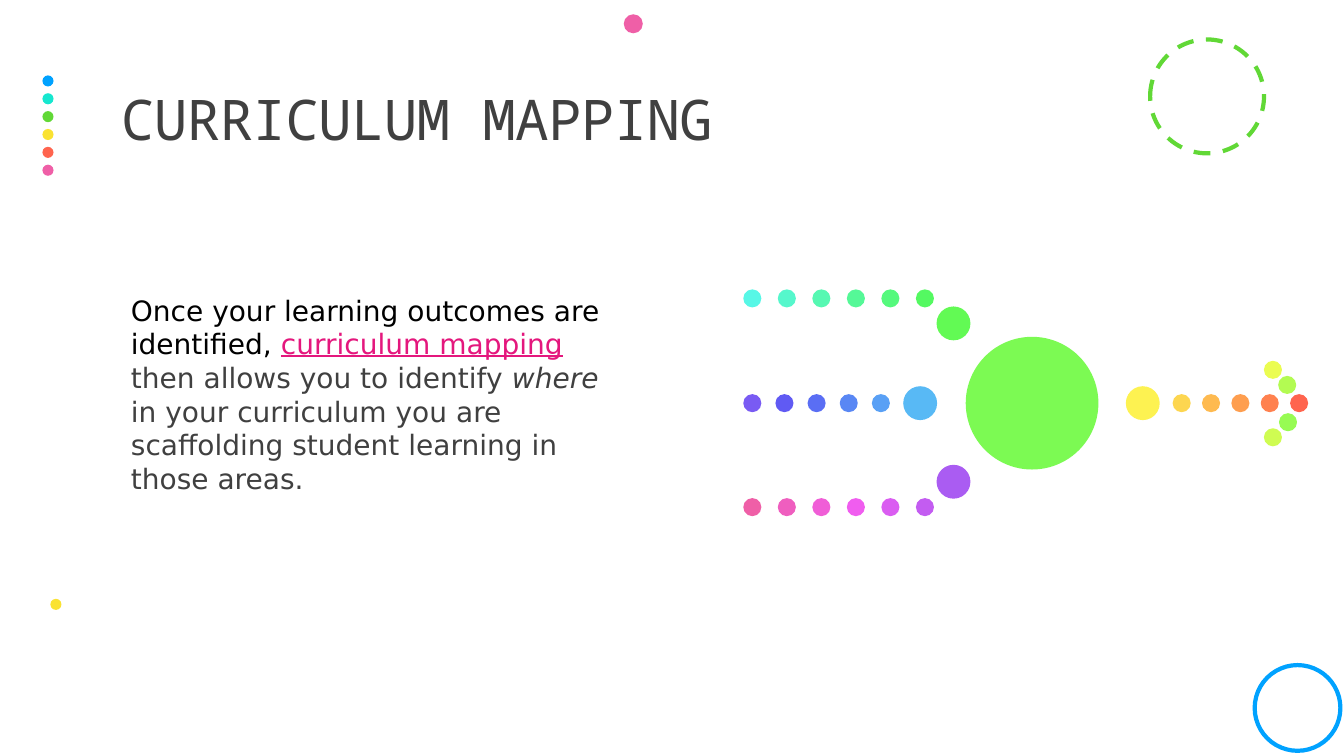
"""Build the curriculum mapping slide with its dotted process diagram."""
import pptx
import pptx.util
import pptx.dml.color
import pptx.enum.dml
import pptx.enum.shapes
import pptx.enum.text

Cm = pptx.util.Cm
Pt = pptx.util.Pt
RGBColor = pptx.dml.color.RGBColor

BLUE = RGBColor(0x00, 0xA2, 0xFF)
TEAL = RGBColor(0x16, 0xE7, 0xCF)
GREEN = RGBColor(0x61, 0xD8, 0x36)
YELLOW = RGBColor(0xFA, 0xE2, 0x32)
CORAL = RGBColor(0xFF, 0x64, 0x4E)
PINK = RGBColor(0xEF, 0x5F, 0xA7)
BLACK = RGBColor(0x00, 0x00, 0x00)
GREY = RGBColor(0x40, 0x40, 0x40)
MAGENTA = RGBColor(0xE4, 0x17, 0x7D)
HUB_GREEN = RGBColor(0x7C, 0xFA, 0x53)
INPUT_GREEN = RGBColor(0x62, 0xFA, 0x54)
INPUT_BLUE = RGBColor(0x58, 0xB9, 0xF5)
INPUT_PURPLE = RGBColor(0xAA, 0x5C, 0xF2)
OUTPUT_YELLOW = RGBColor(0xFD, 0xF2, 0x51)
TOP_COLOURS = [RGBColor.from_string(code) for code in "57F7E6 56F7CC 56F8B2 55F897 55F97C 54F961".split()]
MIDDLE_COLOURS = [RGBColor.from_string(code) for code in "795BF3 605AF3 5A6EF4 5987F4 59A0F5".split()]
BOTTOM_COLOURS = [RGBColor.from_string(code) for code in "EF5FA7 EF5EBF F05ED7 F05DEF DA5DF1 C35CF1".split()]
OUTPUT_COLOURS = [RGBColor.from_string(code) for code in "FDD650 FEBA50 FE9E4F FF814F FF644E".split()]
ARROW_COLOURS = [RGBColor.from_string(code) for code in "EBFC51 CFFC52 B3FB52 97FB53".split()]

SMALL, LARGE, HUB, ACCENT = 0.41, 0.81, 3.3, 0.28
AXIS = 10.16

presentation = pptx.Presentation()
presentation.slide_width = Cm(33.87)
presentation.slide_height = Cm(19.05)
slide = presentation.slides.add_slide(presentation.slide_layouts[6])


def add_circle(x, y, diameter, fill=None, line=None, width=1.25):
    """Add a circle centred on x, y."""
    shape = slide.shapes.add_shape(
        pptx.enum.shapes.MSO_SHAPE.OVAL,
        Cm(x - diameter / 2), Cm(y - diameter / 2), Cm(diameter), Cm(diameter))
    shape.shadow.inherit = False
    for part, colour in ((shape.fill, fill), (shape.line.fill, line)):
        if colour is None:
            part.background()
        else:
            part.solid()
            part.fore_color.rgb = colour
    if line is not None:
        shape.line.width = Pt(width)
    return shape


def add_text(left, top, width, height, frame_format, paragraph_format, runs):
    """Add a text box with one paragraph made of formatted runs."""
    frame = slide.shapes.add_textbox(Cm(left), Cm(top), Cm(width), Cm(height)).text_frame
    for name, value in frame_format.items():
        setattr(frame, name, value)
    paragraph = frame.paragraphs[0]
    for name, value in paragraph_format.items():
        setattr(paragraph, name, value)
    for text, colour, font_format in runs:
        run = paragraph.add_run()
        run.text = text
        run.font.color.rgb = colour
        for name, value in font_format.items():
            setattr(run.font, name, value)
    return paragraph


for index, colour in enumerate([BLUE, TEAL, GREEN, YELLOW, CORAL, PINK]):
    add_circle(1.21, 2.04 + 0.45 * index, ACCENT, colour)
dashed_ring = add_circle(30.42, 2.43, 2.87, line=GREEN, width=3)
dashed_ring.line.dash_style = pptx.enum.dml.MSO_LINE.DASH
add_circle(15.96, 0.6, 0.48, PINK)
add_circle(1.41, 15.23, ACCENT, YELLOW)
add_circle(32.7, 17.84, 2.16, line=BLUE, width=3)

frame_format = {
    "word_wrap": True,
    "margin_left": Cm(0),
    "margin_right": Cm(0),
    "margin_top": Cm(0.13),
    "margin_bottom": Cm(0.13),
}
title_font = {"name": "Noto Sans Mono", "size": Pt(40)}
title = add_text(
    3.05, 1.17, 27.94, 3.81,
    {**frame_format, "vertical_anchor": pptx.enum.text.MSO_ANCHOR.MIDDLE},
    {"line_spacing": 0.9},
    [("CURRICULUM MAPPING", GREY, title_font)])
title.runs[0]._r.get_or_add_rPr().set("spc", "-50")

dot_rows = [
    (18.96, 0.87, 7.52, TOP_COLOURS),
    (18.96, 0.81, AXIS, MIDDLE_COLOURS),
    (18.96, 0.87, 12.78, BOTTOM_COLOURS),
    (29.78, 0.74, AXIS, OUTPUT_COLOURS),
]
for start, step, y, colours in dot_rows:
    for index, colour in enumerate(colours):
        add_circle(start + step * index, y, SMALL, colour, colour)

arrow_points = [(32.08, 9.32), (32.08, 11.02), (32.44, 9.7), (32.46, 10.64)]
for (x, y), colour in zip(arrow_points, ARROW_COLOURS):
    add_circle(x, y, SMALL, colour, colour)

nodes = [
    (24.03, 8.15, LARGE, INPUT_GREEN),
    (23.19, AXIS, LARGE, INPUT_BLUE),
    (24.03, 12.14, LARGE, INPUT_PURPLE),
    (26.01, AXIS, HUB, HUB_GREEN),
    (28.8, AXIS, LARGE, OUTPUT_YELLOW),
]
for x, y, diameter, colour in nodes:
    add_circle(x, y, diameter, colour, colour)

body_font = {"name": "DejaVu Sans", "size": Pt(20)}
add_text(
    3.05, 7.26, 12.62, 10.69,
    {**frame_format, "margin_left": Cm(0.25)},
    {"space_before": Pt(12), "space_after": Pt(2)},
    [
        ("Once your learning outcomes are identified, ", BLACK, body_font),
        ("curriculum mapping", MAGENTA, {**body_font, "underline": True}),
        (" then allows you to identify ", GREY, body_font),
        ("where", GREY, {**body_font, "italic": True}),
        (" in your curriculum you are scaffolding student learning in those areas.", GREY, body_font),
    ])

presentation.save("out.pptx")
